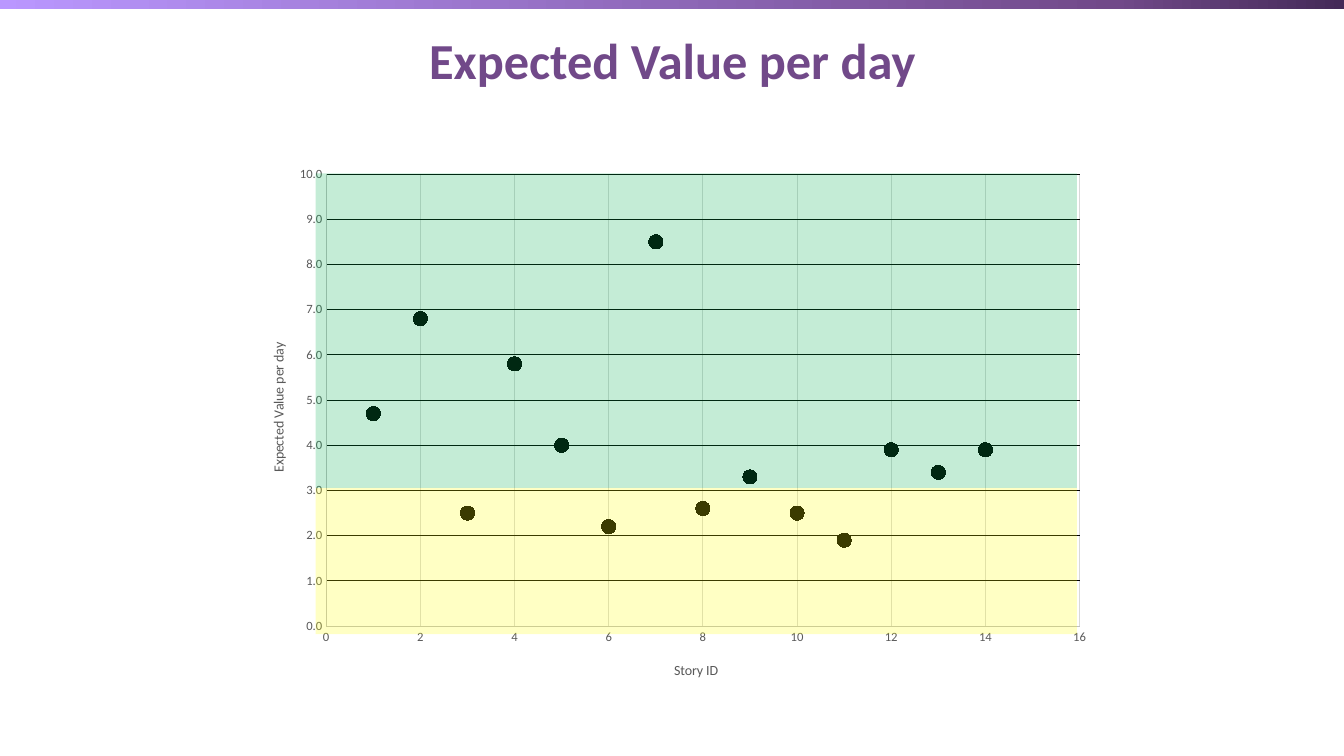
from copy import deepcopy

from lxml.etree import SubElement
from pptx import Presentation
from pptx.chart.data import XyChartData
from pptx.dml.color import RGBColor
from pptx.enum.chart import XL_CHART_TYPE, XL_MARKER_STYLE, XL_TICK_MARK
from pptx.enum.shapes import MSO_SHAPE
from pptx.enum.text import MSO_ANCHOR, PP_ALIGN
from pptx.oxml import parse_xml
from pptx.oxml.ns import nsdecls, qn
from pptx.util import Inches, Pt

WIDTH, HEIGHT = Inches(13.33), Inches(7.5)
FONT = "Calibri"
PURPLE = RGBColor(0x71, 0x49, 0x89)
DARK_PURPLE = RGBColor(0x44, 0x2A, 0x58)
LILAC = RGBColor(0xBA, 0x97, 0xFF)
BLACK = RGBColor(0x00, 0x00, 0x00)
TEXT_GREY = RGBColor(0x59, 0x59, 0x59)
AXIS_GREY = RGBColor(0xBF, 0xBF, 0xBF)
GRID_GREY = RGBColor(0xD9, 0xD9, 0xD9)
GREEN = RGBColor(0x00, 0xB0, 0x50)
YELLOW = RGBColor(0xFF, 0xFF, 0x00)

# Expected value per day of stories 1, 2, 3 and so on
STORY_VALUES = [4.7, 6.8, 2.5, 5.8, 4, 2.2, 8.5, 2.6, 3.3, 2.5, 1.9, 3.9, 3.4, 3.9]

# Value bands: both share left edge and width, and meet at the split
BAND_LEFT, BAND_WIDTH = 3.13, 7.55
BAND_TOP, BAND_SPLIT, BAND_BOTTOM = 1.72, 4.84, 6.29


def set_font(font, size, color, bold=False):
    formats = {"name": FONT, "size": Pt(size), "bold": bold}
    for name, value in formats.items():
        setattr(font, name, value)
    font.color.rgb = color


def set_line(line, color):
    line.color.rgb = color
    line.width = Pt(0.75)


def add_rectangle(slide, left, top, width, height):
    box = [Inches(length) for length in (left, top, width, height)]
    shape = slide.shapes.add_shape(MSO_SHAPE.RECTANGLE, *box)
    shape.shadow.inherit = False
    shape.line.fill.background()
    return shape


def add_top_bar(slide):
    fill = add_rectangle(slide, -0.03, -0.02, 13.36, 0.11).fill
    fill.gradient()
    fill.gradient_angle = 180
    # The default gradient has two stops; a third goes between them
    stop_list = fill.gradient_stops[0]._gs.getparent()
    stop_list.insert(1, deepcopy(stop_list[0]))
    colors = [(0, DARK_PURPLE), (0.17, PURPLE), (1, LILAC)]
    for stop, (position, color) in zip(fill.gradient_stops, colors):
        stop.position = position
        stop.color.rgb = color


def add_title(slide, text):
    box = slide.shapes.add_textbox(Inches(0.37), Inches(0.08), Inches(12.6), Inches(1.02))
    frame = box.text_frame
    frame.word_wrap = True
    frame.vertical_anchor = MSO_ANCHOR.MIDDLE
    paragraph = frame.paragraphs[0]
    paragraph.text = text
    paragraph.alignment = PP_ALIGN.CENTER
    set_font(paragraph.font, 36, PURPLE, bold=True)


def add_band(slide, top, bottom, color):
    shape = add_rectangle(slide, BAND_LEFT, top, BAND_WIDTH, bottom - top)
    shape.fill.solid()
    shape.fill.fore_color.rgb = color
    color_element = shape._element.spPr.find(qn("a:solidFill"))[0]
    SubElement(color_element, qn("a:alpha"), val="23000")


def make_layout(inner=False, **shares):
    """Manual chart layout, in shares of the chart's size."""
    target = '<c:layoutTarget val="inner"/>' if inner else ""
    modes = "".join(f'<c:{key}Mode val="edge"/>' for key in ("x", "y"))
    places = "".join(f'<c:{key} val="{value}"/>' for key, value in shares.items())
    return parse_xml(
        f'<c:layout {nsdecls("c")}><c:manualLayout>{target}{modes}{places}'
        "</c:manualLayout></c:layout>"
    )


def format_axis(axis, title, title_place, grid_color, maximum, unit, number_format):
    scale = {
        "minimum_scale": 0,
        "maximum_scale": maximum,
        "major_unit": unit,
        "major_tick_mark": XL_TICK_MARK.NONE,
        "minor_tick_mark": XL_TICK_MARK.NONE,
        "has_major_gridlines": True,
    }
    for name, value in scale.items():
        setattr(axis, name, value)
    set_line(axis.format.line, AXIS_GREY)
    set_line(axis.major_gridlines.format.line, grid_color)
    set_font(axis.tick_labels.font, 9, TEXT_GREY)
    axis.tick_labels.number_format = number_format
    axis.tick_labels.number_format_is_linked = False
    # Axis title
    paragraph = axis.axis_title.text_frame.paragraphs[0]
    paragraph.text = title
    set_font(paragraph.font, 10, TEXT_GREY)
    title_element = axis.axis_title._element
    for layout in title_element.findall(qn("c:layout")):
        title_element.remove(layout)
    title_element.find(qn("c:tx")).addnext(make_layout(**title_place))


def add_scatter_chart(slide):
    data = XyChartData()
    points = data.add_series("Series 1")
    for story, value in enumerate(STORY_VALUES, start=1):
        points.add_data_point(story, value)
    chart = slide.shapes.add_chart(
        XL_CHART_TYPE.XY_SCATTER, Inches(2.39), Inches(1.55),
        Inches(8.54), Inches(5.36), data,
    ).chart
    chart.has_legend = False
    chart.has_title = False
    set_font(chart.font, 10, BLACK)

    # Plot area
    plot = chart.plots[0]
    plot.vary_by_categories = False
    plot_area = chart._chartSpace.chart.plotArea
    for layout in plot_area.findall(qn("c:layout")):
        plot_area.remove(layout)
    plot_area.insert(0, make_layout(inner=True, x=0.099, y=0.033, w=0.875, h=0.837))

    # Markers without a joining line
    series = plot.series[0]
    series.format.line.fill.background()
    series.marker.style = XL_MARKER_STYLE.CIRCLE
    series.marker.size = 10
    series.marker.format.fill.solid()
    series.marker.format.fill.fore_color.rgb = BLACK
    series.marker.format.line.color.rgb = BLACK

    format_axis(chart.category_axis, "Story ID", {"x": 0.5, "y": 0.93},
                GRID_GREY, 16, 2, "General")
    format_axis(chart.value_axis, "Expected Value per day", {"x": 0.03, "y": 0.34},
                BLACK, 10, 1, "0.0")


def main():
    presentation = Presentation()
    presentation.slide_width, presentation.slide_height = WIDTH, HEIGHT
    slide = presentation.slides.add_slide(presentation.slide_layouts[6])
    add_top_bar(slide)
    add_title(slide, "Expected Value per day")
    add_scatter_chart(slide)
    add_band(slide, BAND_TOP, BAND_SPLIT, GREEN)
    add_band(slide, BAND_SPLIT, BAND_BOTTOM, YELLOW)
    presentation.save("out.pptx")


if __name__ == "__main__":
    main()
